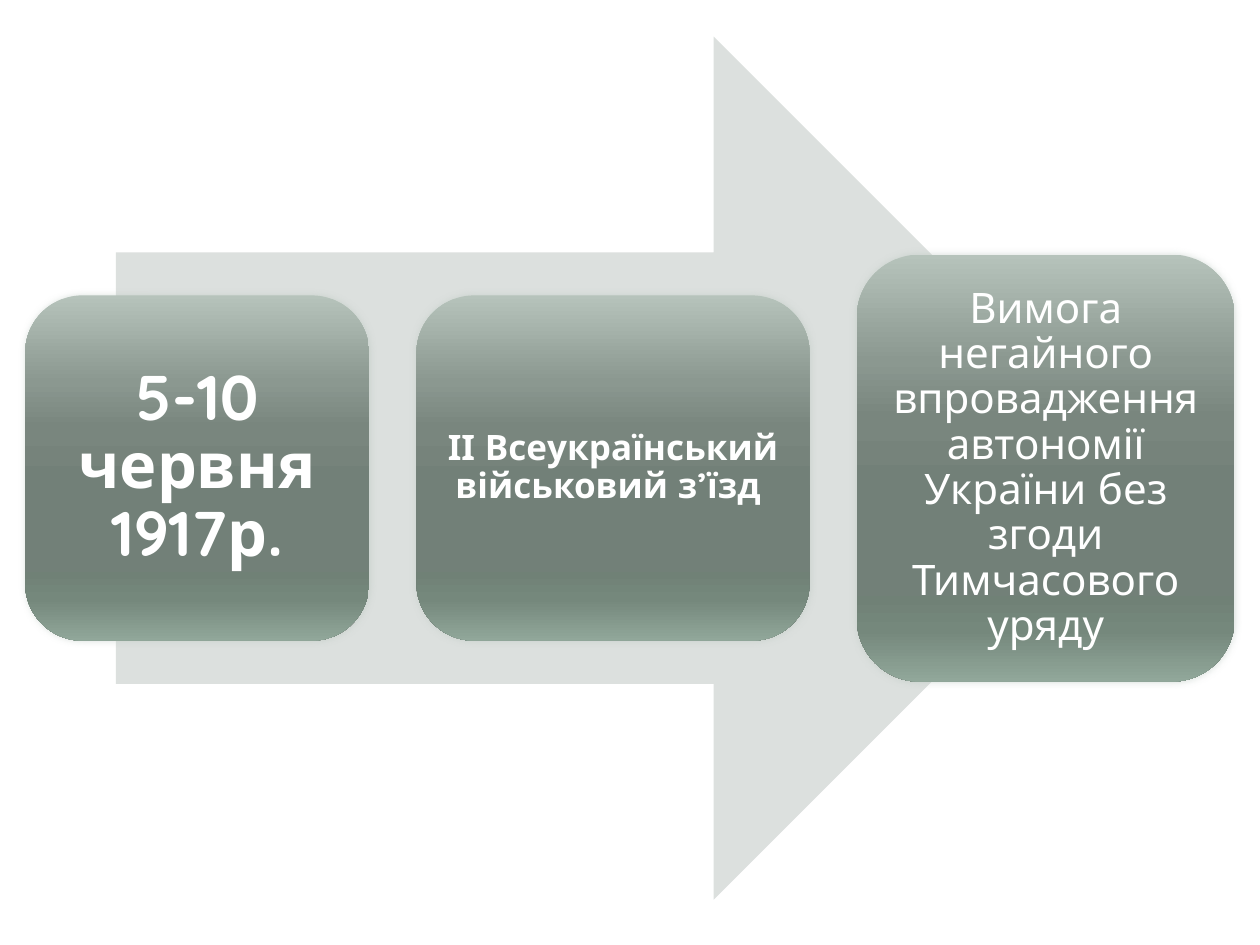
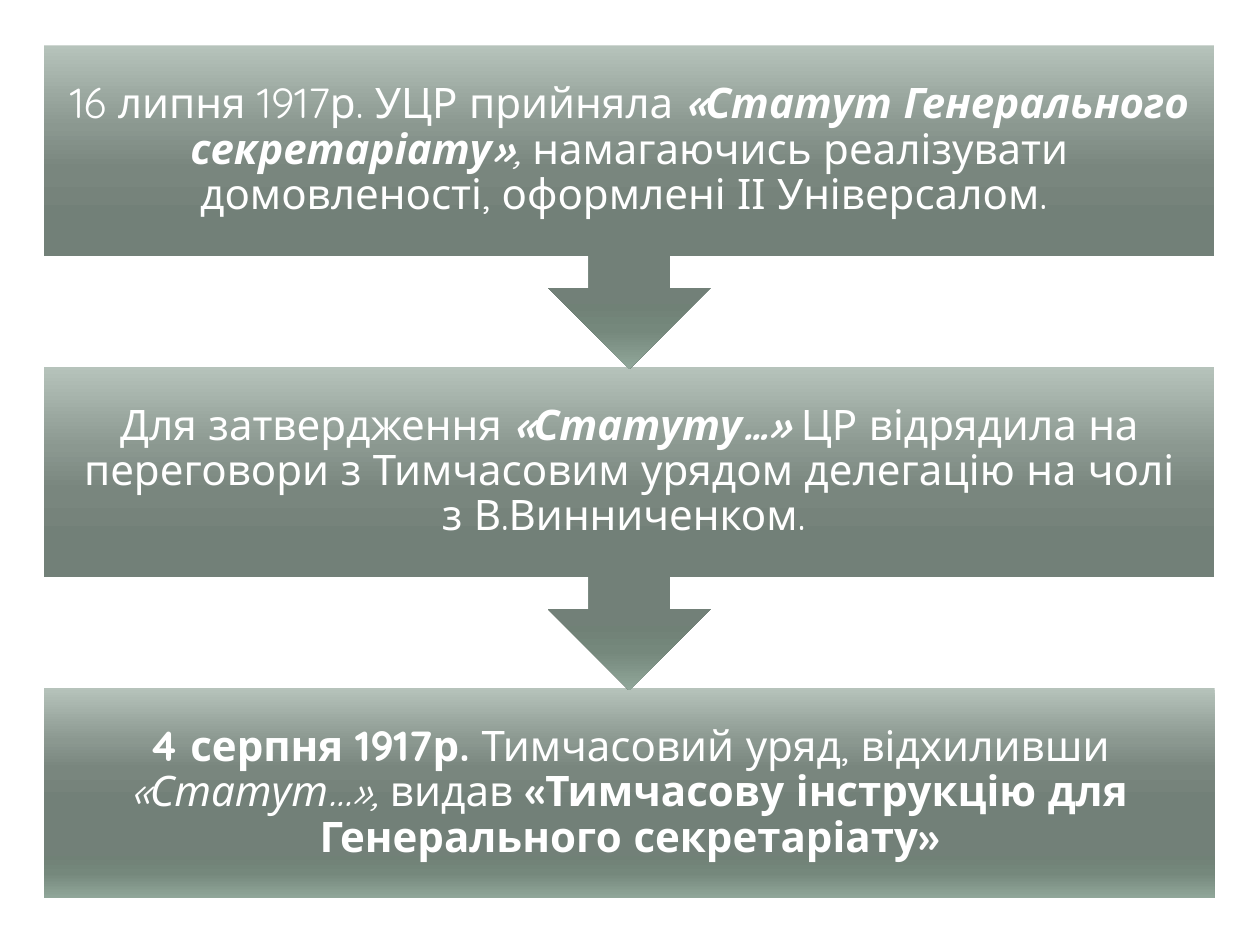
"""Build two slides on the 1917 Ukrainian autonomy talks: an arrow process and a step-down flow."""
from dataclasses import dataclass

from lxml import etree
from pptx import Presentation
from pptx.dml.color import RGBColor
from pptx.enum.shapes import MSO_SHAPE
from pptx.enum.text import MSO_ANCHOR, PP_ALIGN
from pptx.oxml.ns import qn
from pptx.util import Inches, Pt

ARROW = MSO_SHAPE.RIGHT_ARROW
ROUNDED = MSO_SHAPE.ROUNDED_RECTANGLE
RECTANGLE = MSO_SHAPE.RECTANGLE
CALLOUT = MSO_SHAPE.DOWN_ARROW_CALLOUT
MIDDLE = MSO_ANCHOR.MIDDLE
CENTER = PP_ALIGN.CENTER


@dataclass(frozen=True)
class Theme:
    font: str = "Quicksand"
    text: str = "FFFFFF"
    arrow: str = "DCE0DE"
    glow: str = "B6C3BB"
    gradient: tuple = (
        (0, "B6C3BB"), (25, "8B9890"), (38, "79867E"), (55, "728078"),
        (80, "708176"), (88, "75887C"), (100, "91A79A"),
    )
    date_size: int = 36
    event_size: int = 20
    body_size: int = 24
    line_spacing: float = 0.9


THEME = Theme()

CONGRESS = [
    {"size": (2.73, 2.74), "inset": 0.15, "points": THEME.date_size,
     "runs": [("5-10 червня 1917р.", "b")]},
    {"size": (3.12, 2.74), "inset": 0.08, "points": THEME.event_size,
     "runs": [("ІІ Всеукраїнський військовий з’їзд ", "b")]},
    {"size": (3, 3.39), "inset": 0.1, "points": THEME.body_size,
     "runs": [("Вимога негайного впровадження автономії України "
               "без згоди Тимчасового уряду", "")]},
]

STATUTE = [
    [("16 липня 1917р. УЦР прийняла ", ""),
     ("«Статут Генерального секретаріату»", "bi"),
     (", ", "i"),
     ("намагаючись реалізувати домовленості, оформлені ІІ Універсалом. ", "")],
    [("Для затвердження ", ""),
     ("«Статуту…» ", "bi"),
     ("ЦР відрядила на переговори з Тимчасовим урядом делегацію "
      "на чолі з В.Винниченком. ", "")],
    [("4 серпня 1917р. ", "b"),
     ("Тимчасовий уряд, відхиливши ", ""),
     ("«Статут…», ", "i"),
     ("видав", ""),
     (" «Тимчасову інструкцію для Генерального секретаріату»", "b")],
]


def add_plain_shape(slide, kind, left, top, width, height):
    shape = slide.shapes.add_shape(
        kind, Inches(left), Inches(top), Inches(width), Inches(height))
    shape.shadow.inherit = False
    shape.line.fill.background()
    return shape


def fill_gradient(shape):
    shape.fill.gradient()
    shape.fill.gradient_angle = 270
    stops = shape.element.spPr.find(".//" + qn("a:gsLst"))
    for stop in list(stops):
        stops.remove(stop)
    for percent, color in THEME.gradient:
        stop = etree.SubElement(stops, qn("a:gs"), pos=str(percent * 1000))
        etree.SubElement(stop, qn("a:srgbClr"), val=color)


def add_glow(shape):
    effects = shape.element.spPr.find(qn("a:effectLst"))
    shadow = etree.SubElement(
        effects, qn("a:outerShdw"), blurRad="50800", dist="0", rotWithShape="0")
    color = etree.SubElement(shadow, qn("a:srgbClr"), val=THEME.glow)
    etree.SubElement(color, qn("a:alpha"), val="50000")


def write_text(shape, runs, points, inset):
    frame = shape.text_frame
    frame.word_wrap = True
    frame.vertical_anchor = MIDDLE
    frame.margin_left = frame.margin_right = Inches(inset)
    frame.margin_top = frame.margin_bottom = Inches(inset)
    paragraph = frame.paragraphs[0]
    paragraph.alignment = CENTER
    paragraph.line_spacing = THEME.line_spacing
    for text, style in runs:
        run = paragraph.add_run()
        run.text = text
        run.font.name = THEME.font
        run.font.size = Pt(points)
        run.font.bold = "b" in style
        run.font.italic = "i" in style
        run.font.color.rgb = RGBColor.from_string(THEME.text)


def build_congress_slide(slide):
    arrow_top, arrow_height = 0.29, 6.85
    arrow = add_plain_shape(slide, ARROW, 0.92, arrow_top, 8.17, arrow_height)
    arrow.fill.solid()
    arrow.fill.fore_color.rgb = RGBColor.from_string(THEME.arrow)

    left, right = 0.2, 9.8
    middle = arrow_top + arrow_height / 2
    widths = sum(box["size"][0] for box in CONGRESS)
    gap = (right - left - widths) / (len(CONGRESS) - 1)
    for box in CONGRESS:
        width, height = box["size"]
        shape = add_plain_shape(
            slide, ROUNDED, left, middle - height / 2, width, height)
        fill_gradient(shape)
        add_glow(shape)
        write_text(shape, box["runs"], box["points"], box["inset"])
        left += width + gap


def build_statute_slide(slide):
    left, top, width, pitch = 0.35, 0.36, 9.29, 2.55
    callout_height, last_height = 2.57, 1.67
    last = len(STATUTE) - 1
    for index in range(last, -1, -1):
        kind, height = (
            (RECTANGLE, last_height) if index == last else (CALLOUT, callout_height))
        shape = add_plain_shape(slide, kind, left, top + index * pitch, width, height)
        fill_gradient(shape)
        write_text(shape, STATUTE[index], THEME.body_size, 0.19)


def main():
    presentation = Presentation()
    presentation.slide_width = Inches(10)
    presentation.slide_height = Inches(7.5)
    blank = presentation.slide_layouts[6]
    for build in (build_congress_slide, build_statute_slide):
        build(presentation.slides.add_slide(blank))
    presentation.save("out.pptx")


if __name__ == "__main__":
    main()
